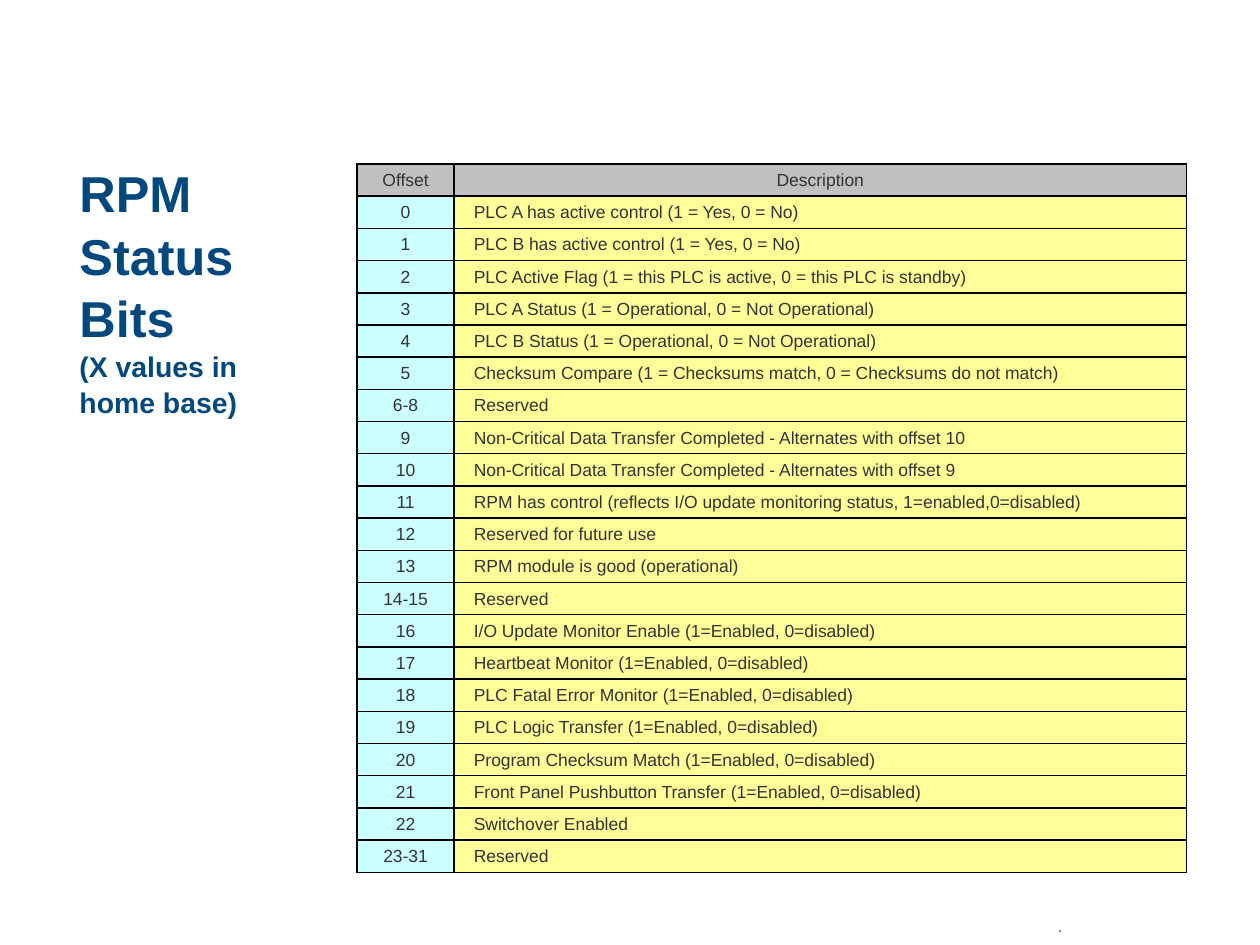
from dataclasses import dataclass

from lxml.etree import SubElement as Sub
from pptx import Presentation
from pptx.dml.color import RGBColor as Rgb
from pptx.enum.text import MSO_ANCHOR as Anchor, PP_ALIGN as Align
from pptx.oxml.ns import qn
from pptx.util import Pt


@dataclass(frozen=True)
class Theme:
    sans: str = "Arial"
    serif: str = "Times New Roman"
    navy: str = "00487D"
    ink: str = "333333"
    mute: str = "909090"
    line: str = "000000"
    head: str = "C0C0C0"
    aqua: str = "CCFFFF"
    sand: str = "FFFF99"
    big: float = 28.8
    mid: float = 16.2
    cell: float = 10
    foot: float = 12


THEME = Theme()

ROWS = [
    ("Offset", "Description"),
    ("0", "PLC A has active control (1 = Yes, 0 = No)"),
    ("1", "PLC B has active control (1 = Yes, 0 = No)"),
    ("2", "PLC Active Flag (1 = this PLC is active, 0 = this PLC is standby)"),
    ("3", "PLC A Status (1 = Operational, 0 = Not Operational)"),
    ("4", "PLC B Status (1 = Operational, 0 = Not Operational)"),
    ("5", "Checksum Compare (1 = Checksums match, 0 = Checksums do not match)"),
    ("6-8", "Reserved"),
    ("9", "Non-Critical Data Transfer Completed - Alternates with offset 10"),
    ("10", "Non-Critical Data Transfer Completed - Alternates with offset 9"),
    ("11", "RPM has control (reflects I/O update monitoring status, 1=enabled,0=disabled)"),
    ("12", "Reserved for future use"),
    ("13", "RPM module is good (operational)"),
    ("14-15", "Reserved"),
    ("16", "I/O Update Monitor Enable (1=Enabled, 0=disabled)"),
    ("17", "Heartbeat Monitor (1=Enabled, 0=disabled)"),
    ("18", "PLC Fatal Error Monitor (1=Enabled, 0=disabled)"),
    ("19", "PLC Logic Transfer (1=Enabled, 0=disabled)"),
    ("20", "Program Checksum Match (1=Enabled, 0=disabled)"),
    ("21", "Front Panel Pushbutton Transfer (1=Enabled, 0=disabled)"),
    ("22", "Switchover Enabled"),
    ("23-31", "Reserved"),
]


def write(para, text, *, size, color, font=THEME.sans, bold=False, align=Align.LEFT):
    para.alignment = align
    run = para.add_run()
    run.text = text
    run.font.name = font
    run.font.size = Pt(size)
    run.font.bold = bold
    run.font.color.rgb = Rgb.from_string(color)


def place(shape, box):
    shape.left, shape.top, shape.width, shape.height = map(Pt, box)


def add_title(slide, box):
    title = slide.shapes.title
    place(title, box)
    frame = title.text_frame
    frame.word_wrap = True
    frame.vertical_anchor = Anchor.MIDDLE
    para = frame.paragraphs[0]
    para.line_spacing = 1.04
    write(para, "RPM Status Bits", size=THEME.big, color=THEME.navy, bold=True)
    para.add_line_break()
    write(para, "(X values in home base)", size=THEME.mid, color=THEME.navy, bold=True)


def frame_cell(cell, fill):
    props = cell._tc.get_or_add_tcPr()
    for side in ("lnL", "lnR", "lnT", "lnB"):
        edge = Sub(props, qn(f"a:{side}"), w=str(Pt(1)))
        paint = Sub(edge, qn("a:solidFill"))
        Sub(paint, qn("a:srgbClr"), val=THEME.line)
    cell.fill.solid()
    cell.fill.fore_color.rgb = Rgb.from_string(fill)


def fill_cell(cell, text, head, first):
    side = THEME.aqua if first else THEME.sand
    frame_cell(cell, THEME.head if head else side)
    cell.margin_left = cell.margin_right = Pt(11.3)
    cell.margin_top = cell.margin_bottom = Pt(3.4)
    cell.vertical_anchor = Anchor.MIDDLE if head else Anchor.BOTTOM
    para = cell.text_frame.paragraphs[0]
    props = para._p.get_or_add_pPr()
    props.set("marL", str(Pt(27)))
    props.set("indent", str(Pt(-27)))
    write(para, text, size=THEME.cell, color=THEME.ink,
          align=Align.CENTER if head or first else Align.LEFT)


def add_bits(slide, box):
    left, top, width, height = map(Pt, box)
    table = slide.shapes.add_table(len(ROWS), 2, left, top, width, height).table
    table.first_row = table.horz_banding = False
    table.columns[0].width = Pt(55.5)
    table.columns[1].width = width - Pt(55.5)
    for r, row in enumerate(ROWS):
        table.rows[r].height = height // len(ROWS)
        for c, text in enumerate(row):
            fill_cell(table.cell(r, c), text, r == 0, c == 0)


def add_foot(slide, box):
    frame = slide.shapes.add_textbox(*map(Pt, box)).text_frame
    frame.word_wrap = True
    frame.vertical_anchor = Anchor.MIDDLE
    write(frame.paragraphs[0], ".", size=THEME.foot, color=THEME.mute,
          font=THEME.serif, align=Align.CENTER)


def main():
    deck = Presentation()
    deck.slide_width, deck.slide_height = Pt(720), Pt(540)
    slide = deck.slides.add_slide(deck.slide_layouts[5])
    add_title(slide, (38.2, 87.8, 147.6, 154.8))
    add_bits(slide, (204, 93.7, 474, 404.8))
    add_foot(slide, (491.8, 516.2, 228.2, 23.8))
    deck.save("out.pptx")


if __name__ == "__main__":
    main()
